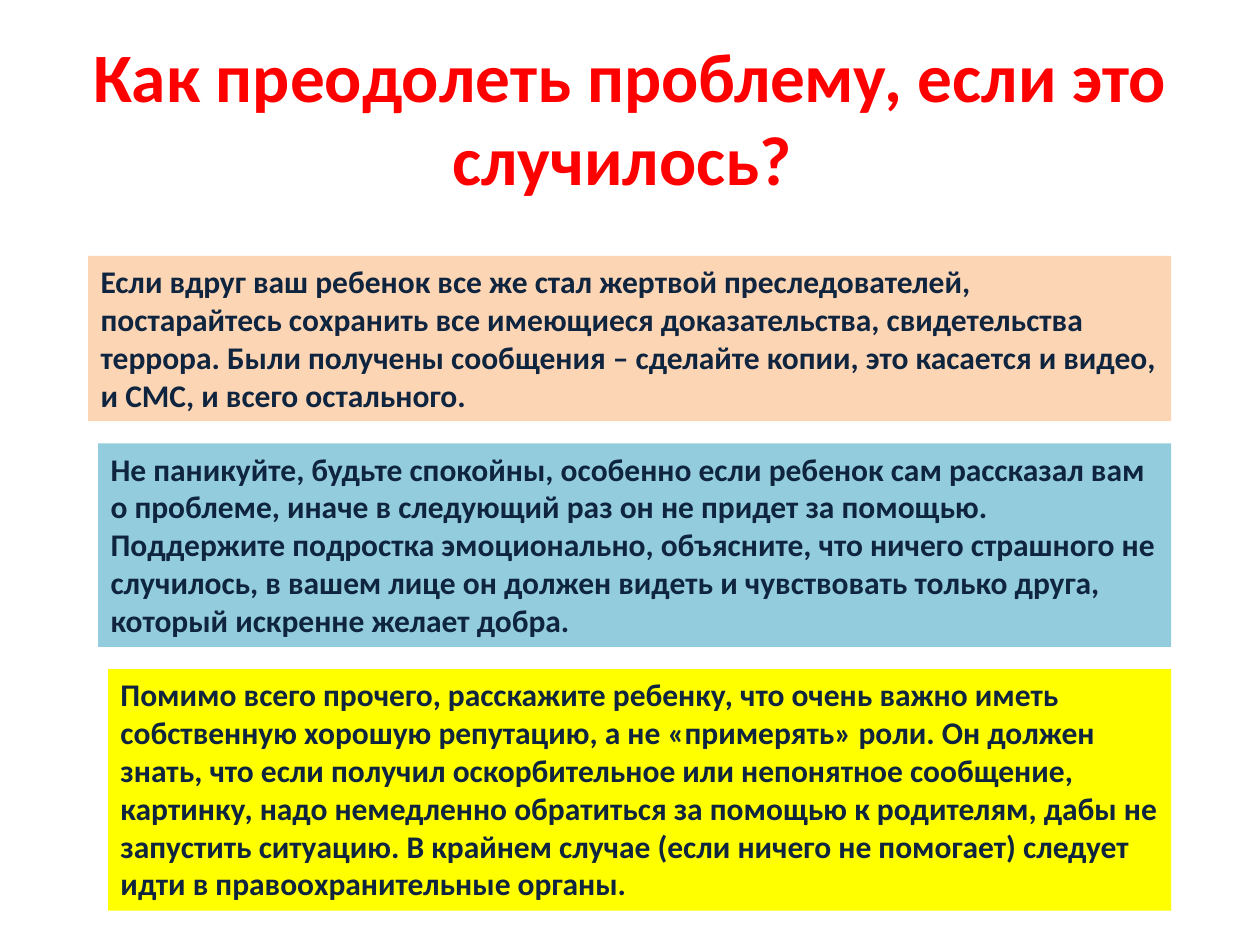
from dataclasses import dataclass

from pptx import Presentation
from pptx.dml.color import RGBColor
from pptx.enum.shapes import MSO_SHAPE
from pptx.enum.text import MSO_ANCHOR, MSO_AUTO_SIZE, PP_ALIGN
from pptx.util import Cm, Pt


@dataclass(frozen=True)
class Theme:
    font: str = "Calibri"
    title_size: float = 39.6
    body_size: float = 18
    title_color: str = "FF0000"
    body_color: str = "0F243E"
    peach: str = "FCD5B5"
    blue: str = "93CDDD"
    yellow: str = "FFFF00"


class SlideBuilder:
    def __init__(self, slide, theme):
        self.slide = slide
        self.theme = theme

    def set_text(self, shape, text, size, color, alignment, anchor):
        text_frame = shape.text_frame
        text_frame.word_wrap = True
        text_frame.vertical_anchor = anchor
        text_frame.text = text
        paragraph = text_frame.paragraphs[0]
        paragraph.alignment = alignment
        for run in paragraph.runs:
            run.font.name = self.theme.font
            run.font.size = Pt(size)
            run.font.bold = True
            run.font.color.rgb = RGBColor.from_string(color)

    def title(self, text, left, top, width, height):
        shape = self.slide.shapes.add_textbox(Cm(left), Cm(top), Cm(width), Cm(height))
        self.set_text(shape, text, self.theme.title_size, self.theme.title_color,
                      PP_ALIGN.CENTER, MSO_ANCHOR.MIDDLE)

    def advice(self, text, fill, left, top, width, height):
        shape = self.slide.shapes.add_shape(
            MSO_SHAPE.RECTANGLE, Cm(left), Cm(top), Cm(width), Cm(height))
        shape.shadow.inherit = False
        shape.fill.solid()
        shape.fill.fore_color.rgb = RGBColor.from_string(fill)
        shape.line.fill.background()
        self.set_text(shape, text, self.theme.body_size, self.theme.body_color,
                      PP_ALIGN.LEFT, MSO_ANCHOR.TOP)
        shape.text_frame.auto_size = MSO_AUTO_SIZE.SHAPE_TO_FIT_TEXT


def main():
    presentation = Presentation()
    presentation.slide_width = Cm(25.4)
    presentation.slide_height = Cm(19.05)
    slide = presentation.slides.add_slide(presentation.slide_layouts[6])
    theme = Theme()
    builder = SlideBuilder(slide, theme)

    builder.title("Как преодолеть проблему, если это случилось? ", 1.27, 0.76, 22.86, 3.18)

    advice_blocks = [
        (theme.peach, 4,
         "Если вдруг ваш ребенок все же стал жертвой преследователей, постарайтесь "
         "сохранить все имеющиеся доказательства, свидетельства террора. Были получены "
         "сообщения – сделайте копии, это касается и видео, и СМС, и всего остального."),
        (theme.blue, 5,
         "Не паникуйте, будьте спокойны, особенно если ребенок сам рассказал вам о "
         "проблеме, иначе в следующий раз он не придет за помощью. Поддержите подростка "
         "эмоционально, объясните, что ничего страшного не случилось, в вашем лице он "
         "должен видеть и чувствовать только друга, который искренне желает добра."),
        (theme.yellow, 6,
         "Помимо всего прочего, расскажите ребенку, что очень важно иметь собственную "
         "хорошую репутацию, а не «примерять» роли. Он должен знать, что если получил "
         "оскорбительное или непонятное сообщение, картинку, надо немедленно обратиться "
         "за помощью к родителям, дабы не запустить ситуацию. В крайнем случае (если "
         "ничего не помогает) следует идти в правоохранительные органы."),
    ]
    first_left, indent, right = 1.78, 0.2, 23.61
    line_height, padding, gap = 0.77, 0.25, 0.45
    top = 5.16
    for index, (fill, line_count, text) in enumerate(advice_blocks):
        left = first_left + index * indent
        height = line_count * line_height + padding
        builder.advice(text, fill, left, top, right - left, height)
        top += height + gap

    presentation.save("out.pptx")


if __name__ == "__main__":
    main()
